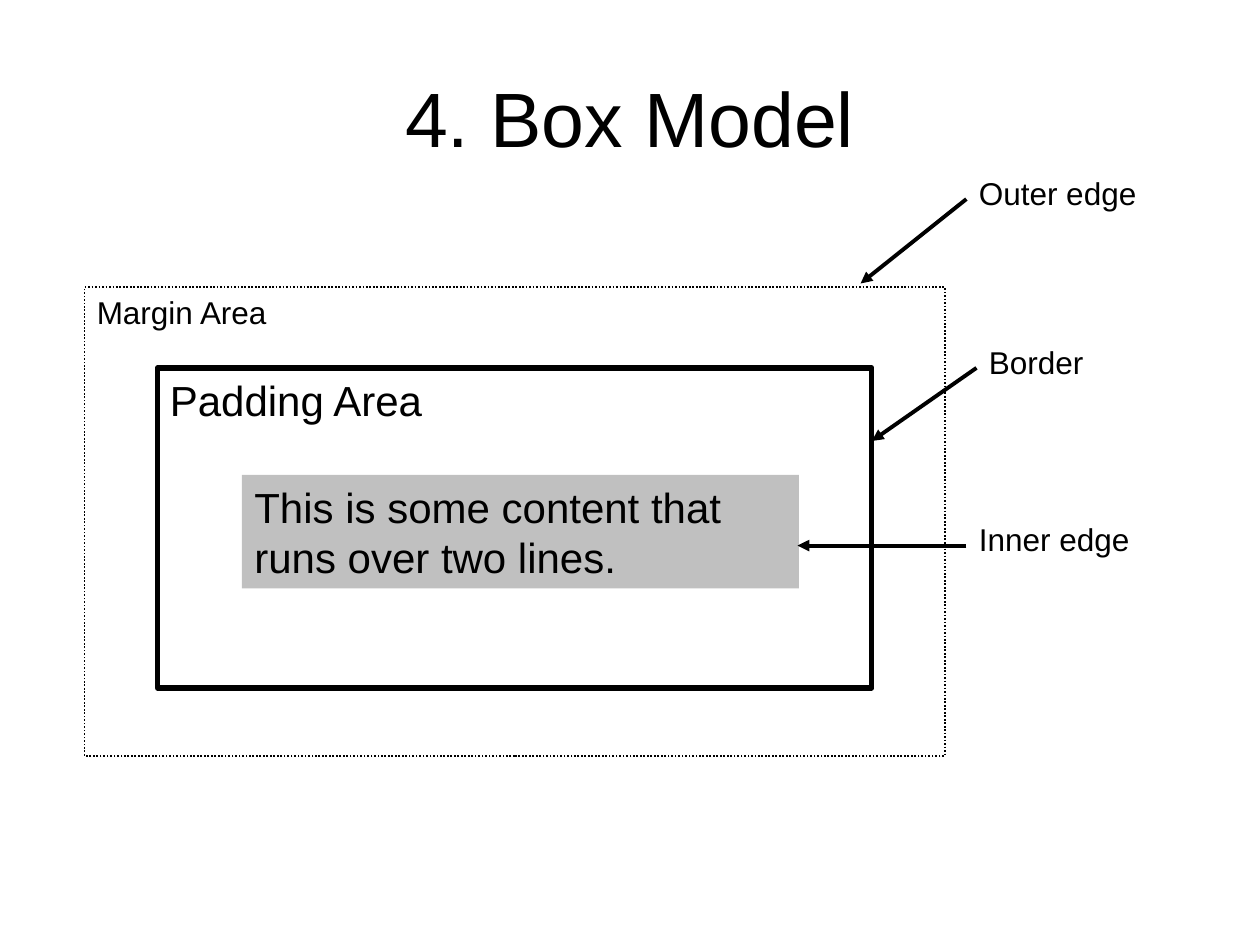
"""Draw the box model slide with nested areas and labelled edges."""
from dataclasses import dataclass
from typing import Optional

from lxml import etree
from pptx import Presentation
from pptx.dml.color import RGBColor
from pptx.enum.dml import MSO_LINE
from pptx.enum.shapes import MSO_CONNECTOR, MSO_SHAPE
from pptx.enum.text import MSO_ANCHOR, PP_ALIGN
from pptx.oxml.ns import qn
from pptx.slide import Slide
from pptx.text.text import TextFrame
from pptx.util import Inches, Pt

RECT = MSO_SHAPE.RECTANGLE
STRAIGHT = MSO_CONNECTOR.STRAIGHT
DOTS = MSO_LINE.ROUND_DOT
TOP, MIDDLE = MSO_ANCHOR.TOP, MSO_ANCHOR.MIDDLE
LEFT, CENTER = PP_ALIGN.LEFT, PP_ALIGN.CENTER


@dataclass(frozen=True)
class Theme:
    """Colours, font and sizes in points."""
    font: str = "Arial"
    ink: RGBColor = RGBColor(0, 0, 0)
    gray: RGBColor = RGBColor(0xC0, 0xC0, 0xC0)
    title: int = 44
    large: int = 24
    small: int = 18
    arrow: float = 2.25


THEME = Theme()


@dataclass(frozen=True)
class Area:
    """A nested rectangle with its text."""
    text: str
    left: float
    top: float
    width: float
    height: float
    size: int
    line: float = 0
    dotted: bool = False
    fill: Optional[RGBColor] = None


@dataclass(frozen=True)
class Label:
    """An edge label and the point its arrow meets."""
    text: str
    left: float
    top: float
    width: float
    tip_x: float
    tip_y: float


AREAS = (
    Area("Margin Area", 0.67, 2.28, 6.83, 3.72, THEME.small, 1, True),
    Area("Padding Area", 1.25, 2.92, 5.67, 2.54, THEME.large, 3),
    Area("This is some content that runs over two lines.",
         1.92, 3.77, 4.42, 0.9, THEME.large, fill=THEME.gray),
)
LABELS = (
    Label("Outer edge", 7.67, 1.33, 1.58, 6.83, 2.25),
    Label("Inner edge", 7.67, 4.08, 1.5, 6.33, 4.33),
    Label("Border", 7.75, 2.67, 1.58, 6.92, 3.5),
)
LABEL_HEIGHT = 0.4
ARROW_DROP = 0.25


def write(frame: TextFrame, text: str, size: int,
          align: PP_ALIGN = LEFT, anchor: MSO_ANCHOR = TOP) -> None:
    """Put one styled run in a wrapping frame."""
    frame.word_wrap = True
    frame.vertical_anchor = anchor
    line = frame.paragraphs[0]
    line.alignment = align
    run = line.add_run()
    run.text = text
    run.font.name = THEME.font
    run.font.size = Pt(size)
    run.font.color.rgb = THEME.ink


def draw_title(slide: Slide, text: str) -> None:
    """Place and fill the title."""
    title = slide.shapes.title
    title.left, title.top = Inches(0.5), Inches(0.3)
    title.width, title.height = Inches(9), Inches(1.25)
    write(title.text_frame, text, THEME.title, CENTER, MIDDLE)


def draw_area(slide: Slide, area: Area) -> None:
    """Draw one nested area."""
    box = slide.shapes.add_shape(
        RECT, Inches(area.left), Inches(area.top),
        Inches(area.width), Inches(area.height))
    box.shadow.inherit = False
    if area.fill is None:
        box.fill.background()
    else:
        box.fill.solid()
        box.fill.fore_color.rgb = area.fill
    if area.line:
        box.line.color.rgb = THEME.ink
        box.line.width = Pt(area.line)
    else:
        box.line.fill.background()
    if area.dotted:
        box.line.dash_style = DOTS
    write(box.text_frame, area.text, area.size)


def draw_label(slide: Slide, label: Label) -> None:
    """Write one edge label."""
    box = slide.shapes.add_textbox(
        Inches(label.left), Inches(label.top),
        Inches(label.width), Inches(LABEL_HEIGHT))
    write(box.text_frame, label.text, THEME.small)


def draw_arrow(slide: Slide, label: Label) -> None:
    """Point from a label to its edge."""
    arrow = slide.shapes.add_connector(
        STRAIGHT, Inches(label.left), Inches(label.top + ARROW_DROP),
        Inches(label.tip_x), Inches(label.tip_y))
    arrow.line.color.rgb = THEME.ink
    arrow.line.width = Pt(THEME.arrow)
    etree.SubElement(arrow.line._get_or_add_ln(), qn("a:tailEnd"), type="triangle")
    etree.SubElement(arrow._element.spPr, qn("a:effectLst"))


def main() -> None:
    """Build and save the slide."""
    deck = Presentation()
    deck.slide_width, deck.slide_height = Inches(10), Inches(7.5)
    slide = deck.slides.add_slide(deck.slide_layouts[5])
    draw_title(slide, "4. Box Model")
    for area in AREAS:
        draw_area(slide, area)
    for label in LABELS:
        draw_label(slide, label)
    for label in LABELS:
        draw_arrow(slide, label)
    deck.save("out.pptx")


if __name__ == "__main__":
    main()
